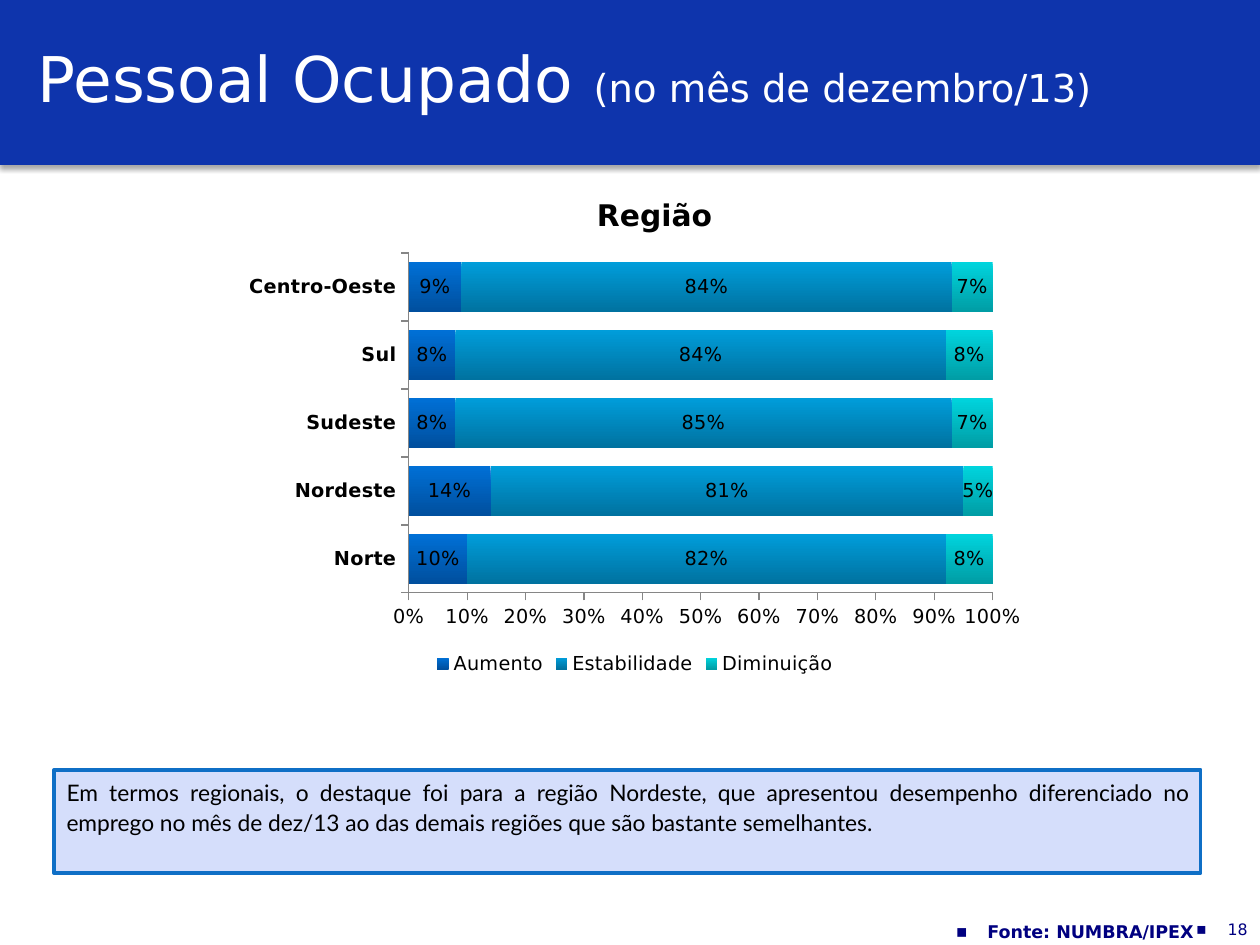
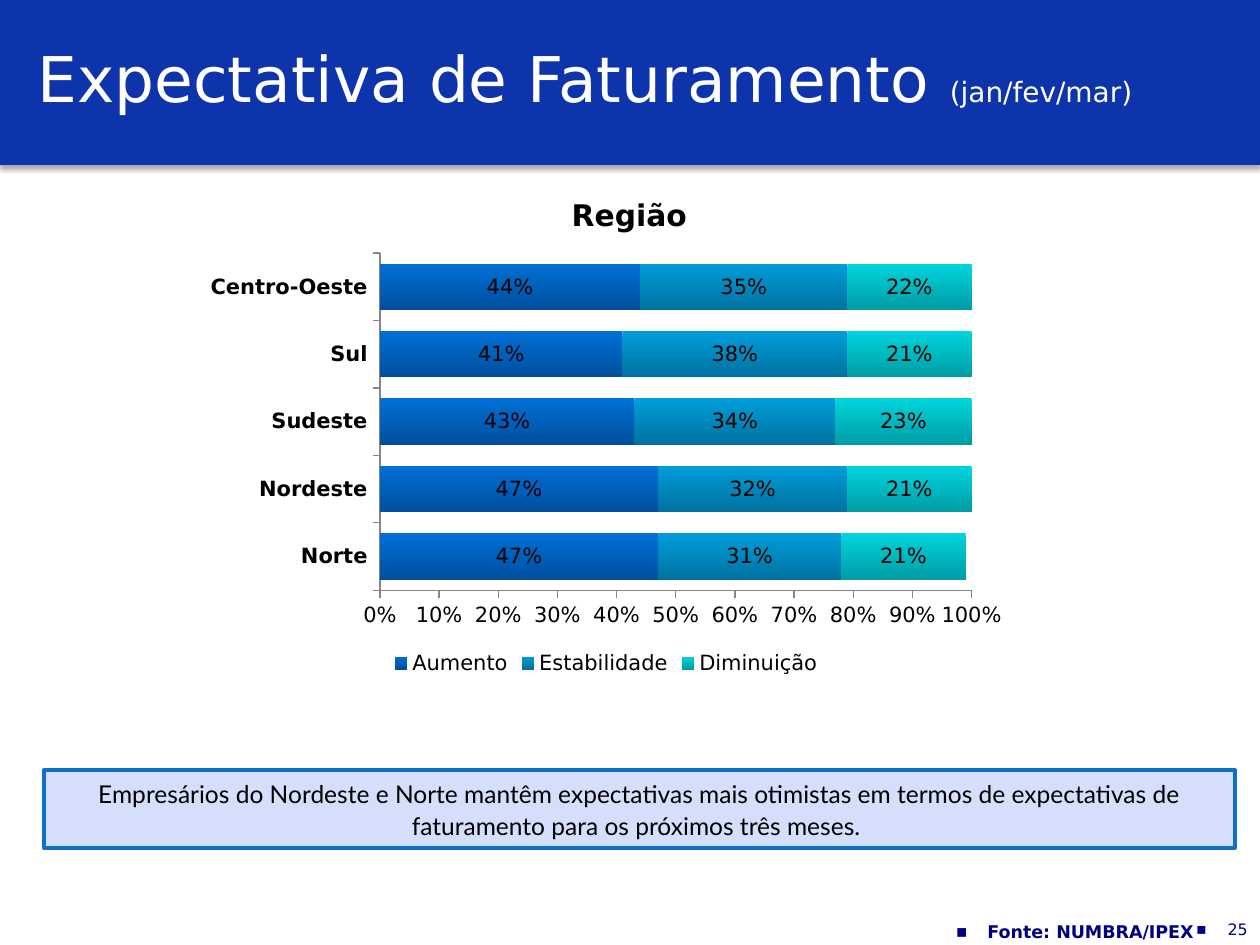
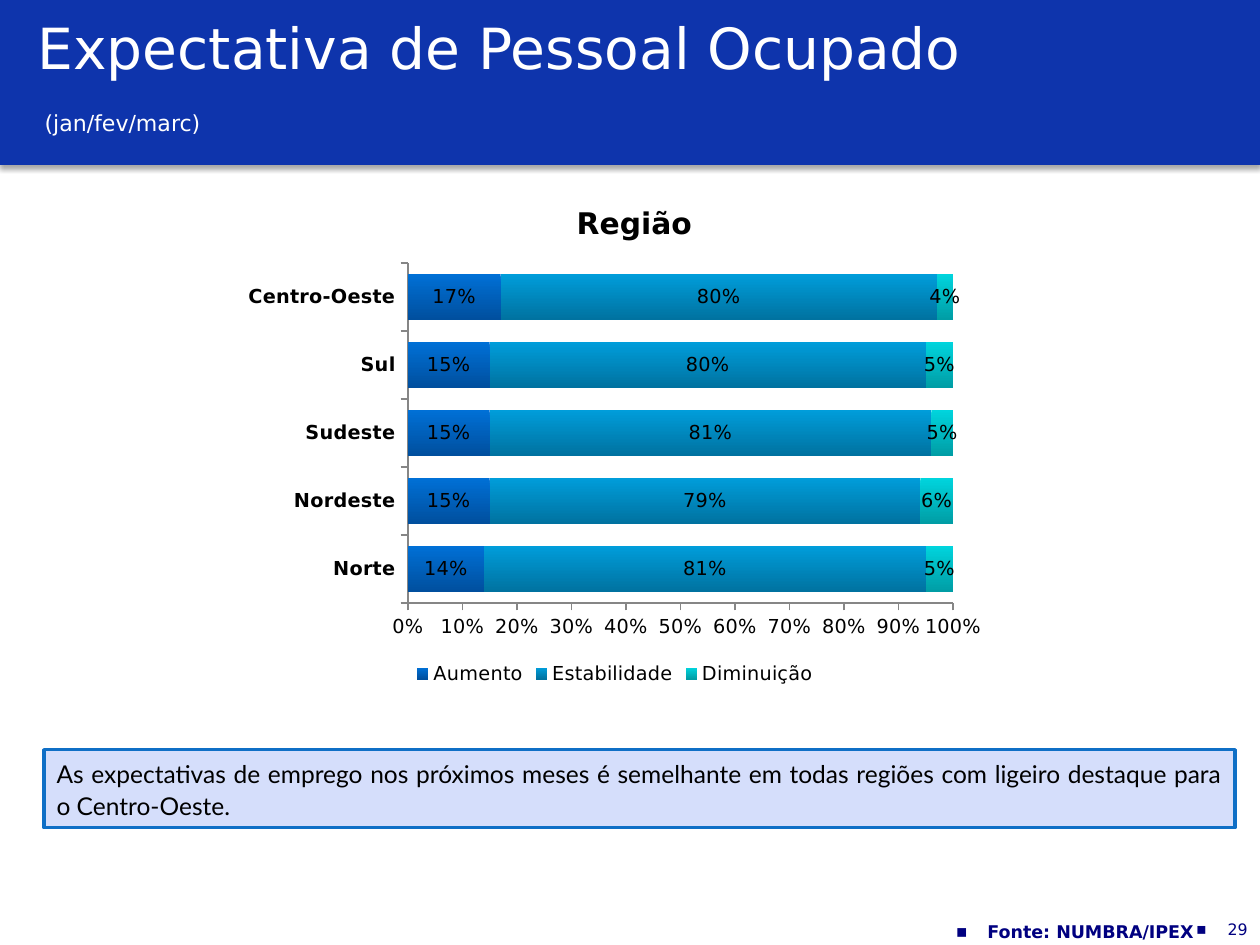
"""Build three slides on regional employment and revenue expectations."""
from dataclasses import dataclass

from lxml import etree
from pptx import Presentation
from pptx import util as u
from pptx.chart.data import CategoryChartData
from pptx.dml.color import RGBColor
from pptx.enum import chart as ch, shapes, text
from pptx.oxml.ns import qn

WIDE, HIGH = u.Inches(10), u.Inches(7.5)
HUES = {
    "band": "0E34AC", "white": "FFFFFF", "black": "000000", "navy": "000080",
    "note": "D5DEFB", "edge": "0F6FC6", "axis": "868686",
}
RAMPS = {
    "Aumento": ("0070D6", "004F9E"),
    "Estabilidade": ("009DDA", "0072A0"),
    "Diminuição": ("00D4DD", "009DA5"),
}
ZONES = ("Norte", "Nordeste", "Sudeste", "Sul", "Centro-Oeste")
SANS, BODY = "DejaVu Sans", "Lato"
LEFT, MID = text.PP_ALIGN.LEFT, text.PP_ALIGN.CENTER
RIGHT, FULL = text.PP_ALIGN.RIGHT, text.PP_ALIGN.JUSTIFY


@dataclass(frozen=True)
class Box:
    """A place given as percentages of the slide's width and height."""
    left: float
    top: float
    width: float
    height: float

    def lengths(self) -> tuple:
        """Return left, top, width and height as slide lengths."""
        return (int(WIDE * self.left / 100), int(HIGH * self.top / 100),
                int(WIDE * self.width / 100), int(HIGH * self.height / 100))


@dataclass(frozen=True)
class Style:
    """The look of one line of text."""
    size: float
    hue: str = "black"
    font: str = SANS
    bold: bool = False
    align: int = LEFT
    space: float = 1.0


@dataclass(frozen=True)
class Page:
    """All that differs from one slide to the next."""
    number: int
    title: tuple
    sizes: tuple
    head: Box
    plot: Box
    size: int
    gap: int
    rows: tuple
    note: str
    place: Box
    style: Style


BAND = Box(0, 0, 100, 17.47)
TITLE = Box(2, 1.07, 96.9, 14.27)
COUNT = Box(88.1, 96.67, 11.9, 3.33)
SOURCE = Box(46.9, 96.8, 48.8, 3.2)
HEAD = Style(17, bold=True, align=MID, space=1.1)

PAGES = (
    Page(18, ("Pessoal Ocupado ", "(no mês de dezembro/13)", " "), (36, 22, 36),
         Box(42.2, 19.73, 19.5, 5.2), Box(18.5, 25.87, 63.8, 46.13), 11, 37,
         ((0.10, 0.14, 0.08, 0.08, 0.09),
          (0.82, 0.81, 0.85, 0.84, 0.84),
          (0.08, 0.05, 0.07, 0.08, 0.07)),
         "Em termos regionais, o destaque foi para a região Nordeste, que "
         "apresentou desempenho diferenciado no emprego no mês de dez/13 ao "
         "das demais regiões que são bastante semelhantes.",
         Box(4.3, 81.47, 91, 10.93), Style(13, font=BODY, align=FULL, space=1.1)),
    Page(25, ("Expectativa de Faturamento ", "(jan/fev/mar)", " "), (36, 16, 36),
         Box(40.2, 19.73, 19.5, 5.6), Box(15.4, 25.87, 65.4, 46.13), 12, 45,
         ((0.47, 0.47, 0.43, 0.41, 0.44),
          (0.31, 0.32, 0.34, 0.38, 0.35),
          (0.21, 0.21, 0.23, 0.21, 0.22)),
         "Empresários do Nordeste e Norte mantêm expectativas mais otimistas "
         "em termos de expectativas de faturamento para os próximos três "
         "meses. ",
         Box(3.5, 81.47, 94.5, 8.27), Style(14, font=BODY, align=MID, space=1.1)),
    Page(29, ("Expectativa de Pessoal Ocupado \v", " (jan/fev/marc)", " "),
         (32.4, 12.6, 28.8),
         Box(40.6, 20.67, 19.5, 5.2), Box(18.5, 26.93, 60.6, 46.13), 11, 48,
         ((0.14, 0.15, 0.15, 0.15, 0.17),
          (0.81, 0.79, 0.81, 0.80, 0.80),
          (0.05, 0.06, 0.05, 0.05, 0.04)),
         "As expectativas de emprego nos próximos meses é semelhante em todas "
         "regiões com ligeiro destaque para o Centro-Oeste.",
         Box(3.5, 79.33, 94.5, 8.27), Style(14, font=BODY, align=FULL, space=1.1)),
)


def tint(name: str) -> RGBColor:
    """Return a named or hex colour."""
    return RGBColor.from_string(HUES.get(name, name))


def dress(font, style: Style) -> None:
    """Give a font the size, face, weight and colour of a style."""
    font.size, font.name, font.bold = u.Pt(style.size), style.font, style.bold
    font.color.rgb = tint(style.hue)


def write(shape, words: str, style: Style):
    """Put one styled paragraph in a shape and return it."""
    frame = shape.text_frame
    frame.word_wrap = True
    frame.vertical_anchor = text.MSO_ANCHOR.TOP
    frame.text = words
    para = frame.paragraphs[0]
    para.alignment, para.line_spacing = style.align, style.space
    for run in para.runs:
        dress(run.font, style)
    return para


def label(slide, box: Box, words: str, style: Style):
    """Add a text box and return its paragraph."""
    return write(slide.shapes.add_textbox(*box.lengths()), words, style)


def block(slide, box: Box, hue: str):
    """Add a plain filled rectangle."""
    shape = slide.shapes.add_shape(shapes.MSO_SHAPE.RECTANGLE, *box.lengths())
    shape.shadow.inherit = False
    shape.fill.solid()
    shape.fill.fore_color.rgb = tint(hue)
    shape.line.fill.background()
    return shape


def shade(shape) -> None:
    """Cast a soft shadow below a shape."""
    glow = etree.SubElement(
        shape._element.spPr.find(qn("a:effectLst")), qn("a:outerShdw"),
        blurRad=str(u.Pt(3.1)), dist=str(u.Pt(1.8)), dir="5400000",
        algn="t", rotWithShape="0")
    hue = etree.SubElement(glow, qn("a:srgbClr"), val=HUES["black"])
    etree.SubElement(hue, qn("a:alpha"), val="35000")


def dot(para) -> None:
    """Give a paragraph a small square bullet."""
    props = para._p.get_or_add_pPr()
    props.set("marL", str(u.Inches(0.25)))
    props.set("indent", str(-u.Inches(0.25)))
    etree.SubElement(props, qn("a:buFont"), typeface=SANS)
    etree.SubElement(props, qn("a:buChar"), char="▪")


def banner(slide, page: Page) -> None:
    """Draw the band and the title with its smaller period."""
    shade(block(slide, BAND, "band"))
    para = label(slide, TITLE, "", Style(36))
    para.text = page.title[0]
    for part in page.title[1:]:
        para.add_run().text = part
    for run, size in zip(para.runs, page.sizes):
        dress(run.font, Style(size, "white"))
    slide.shapes[-1].text_frame.vertical_anchor = text.MSO_ANCHOR.MIDDLE


def footer(slide, page: Page) -> None:
    """Draw the page number and the source line."""
    dot(label(slide, COUNT, str(page.number), Style(9, "navy", align=RIGHT)))
    dot(label(slide, SOURCE, "Fonte: NUMBRA/IPEX",
              Style(10, "navy", bold=True, align=RIGHT)))


def bars(slide, page: Page) -> None:
    """Draw the stacked bars by region."""
    data = CategoryChartData(number_format="0%")
    data.categories = ZONES
    for name, row in zip(RAMPS, page.rows):
        data.add_series(name, row)
    chart = slide.shapes.add_chart(
        ch.XL_CHART_TYPE.BAR_STACKED, *page.plot.lengths(), data).chart
    dress(chart.font, Style(page.size))
    chart.has_title = False
    chart.has_legend = True
    chart.legend.position = ch.XL_LEGEND_POSITION.BOTTOM
    chart.legend.include_in_layout = False
    for axis in (chart.category_axis, chart.value_axis):
        axis.has_major_gridlines = False
        axis.major_tick_mark = ch.XL_TICK_MARK.OUTSIDE
        axis.format.line.color.rgb = tint("axis")
        axis.format.line.width = u.Pt(0.75)
    dress(chart.category_axis.tick_labels.font, Style(page.size, bold=True))
    scale = chart.value_axis
    scale.minimum_scale, scale.maximum_scale, scale.major_unit = 0, 1, 0.1
    scale.tick_labels.number_format = "0%"
    scale.tick_labels.number_format_is_linked = False
    plot = chart.plots[0]
    plot.gap_width, plot.overlap, plot.vary_by_categories = page.gap, 100, False
    for item, ramp in zip(plot.series, RAMPS.values()):
        fill = item.format.fill
        fill.gradient()
        fill.gradient_angle = 270
        for stop, hue in zip(fill.gradient_stops, ramp):
            stop.color.rgb = tint(hue)
        tags = item.data_labels
        tags.show_value = True
        tags.number_format, tags.number_format_is_linked = "0%", False
        dress(tags.font, Style(page.size))


def remark(slide, page: Page) -> None:
    """Draw the framed comment below the chart."""
    shape = block(slide, page.place, "note")
    shape.line.color.rgb = tint("edge")
    shape.line.width = u.Pt(2)
    write(shape, page.note, page.style)


def main() -> None:
    """Build and save the slides."""
    deck = Presentation()
    deck.slide_width, deck.slide_height = WIDE, HIGH
    for page in PAGES:
        slide = deck.slides.add_slide(deck.slide_layouts[6])
        banner(slide, page)
        label(slide, page.head, "Região", HEAD)
        remark(slide, page)
        footer(slide, page)
        bars(slide, page)
    deck.save("out.pptx")


if __name__ == "__main__":
    main()
